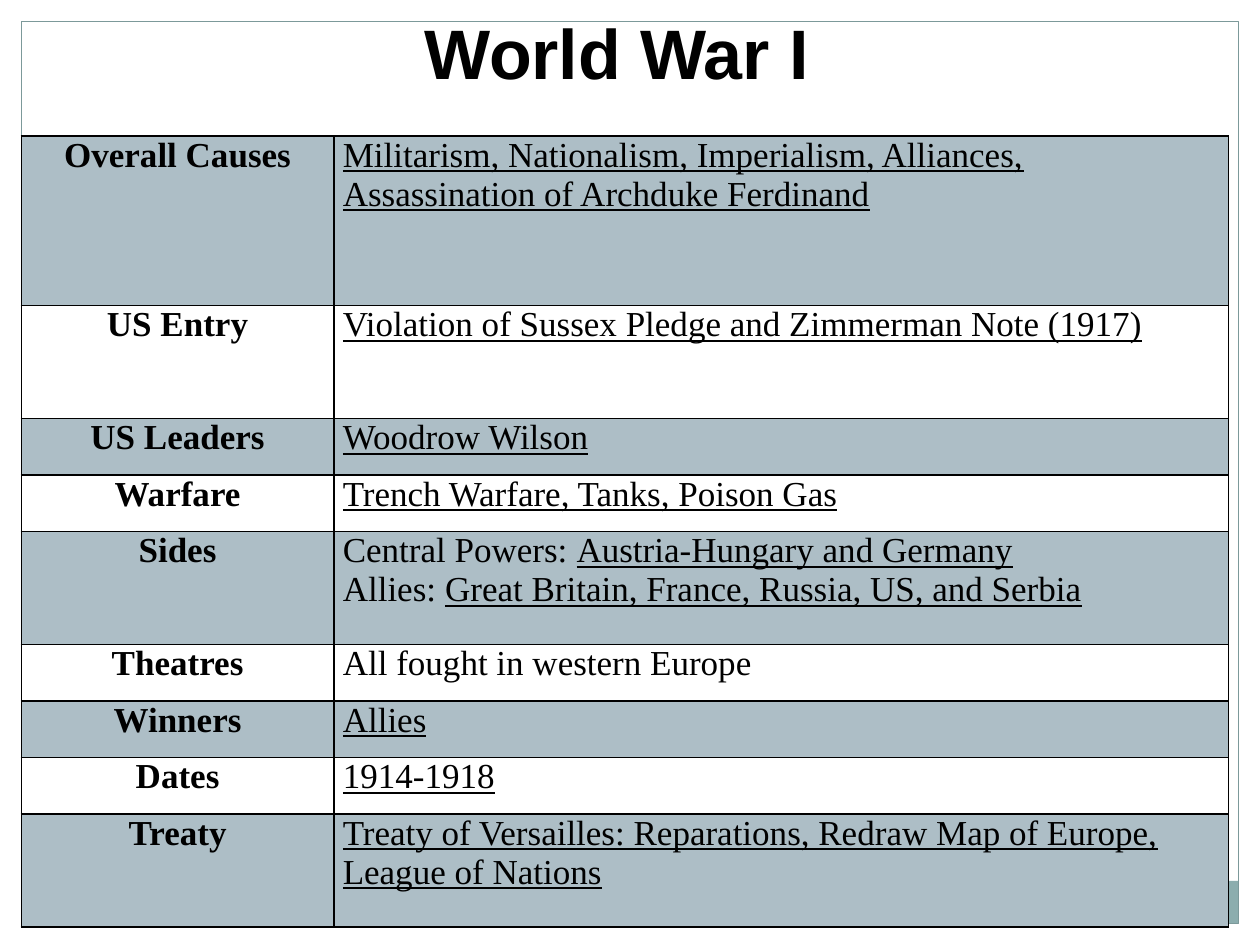
"""Build a one-slide summary table of World War I."""
from lxml import etree
from pptx import Presentation, util as u
from pptx.dml.color import RGBColor
from pptx.enum import shapes, text
from pptx.oxml.ns import qn

COLORS = {"ink": "000000", "paper": "FFFFFF", "band": "ADBEC6",
          "strip": "8CADAE", "frame": "7C999A"}
TITLE = "World War I"
FACTS = [
    ("Overall Causes", 3, [("", "Militarism, Nationalism, Imperialism, Alliances, "
                                "Assassination of Archduke Ferdinand")]),
    ("US Entry", 2, [("", "Violation of Sussex Pledge and Zimmerman Note (1917)")]),
    ("US Leaders", 1, [("", "Woodrow Wilson")]),
    ("Warfare", 1, [("", "Trench Warfare, Tanks, Poison Gas")]),
    ("Sides", 2, [("Central Powers: ", "Austria-Hungary and Germany"),
                  ("Allies: ", "Great Britain, France, Russia, US, and Serbia")]),
    ("Theatres", 1, [("All fought in western Europe", "")]),
    ("Winners", 1, [("", "Allies")]),
    ("Dates", 1, [("", "1914-1918")]),
    ("Treaty", 2, [("", "Treaty of Versailles: Reparations, Redraw Map of Europe, "
                        "League of Nations")]),
]
WIDTH, HEIGHT, MARGIN = 25.4, 19.05, 0.43
COLUMNS = (6.3, 18.03)
TABLE_TOP, ROW_UNIT = 2.74, 1.14
INNER_WIDTH, INNER_HEIGHT = WIDTH - 2 * MARGIN, HEIGHT - 2 * MARGIN
STRIP_HEIGHT = 0.86
BACKDROP = [
    ((0, 0, WIDTH, MARGIN), "paper", None),
    ((WIDTH - MARGIN, 0, MARGIN, HEIGHT), "paper", None),
    ((0, 0, MARGIN, HEIGHT), "paper", None),
    ((MARGIN, HEIGHT - MARGIN - STRIP_HEIGHT, INNER_WIDTH, STRIP_HEIGHT), "strip", None),
    ((MARGIN, MARGIN, INNER_WIDTH, INNER_HEIGHT), None, "frame"),
]


def rgb(name):
    return RGBColor.from_string(COLORS[name])


def paint(fill, name):
    if name:
        fill.solid()
        fill.fore_color.rgb = rgb(name)
    else:
        fill.background()


def add_run(paragraph, words, size, face, bold=False, underline=False):
    run = paragraph.add_run()
    run.text = words
    font = run.font
    font.size, font.name = u.Pt(size), face
    font.bold, font.underline = bold, underline
    font.color.rgb = rgb("ink")


def add_backdrop(slide):
    for box, fill, line in BACKDROP:
        panel = slide.shapes.add_shape(shapes.MSO_SHAPE.RECTANGLE, *map(u.Cm, box))
        panel.shadow.inherit = False
        paint(panel.fill, fill)
        paint(panel.line.fill, line)
        if line:
            panel.line.width = u.Pt(0.75)


def style_cell(cell, fill):
    cell.margin_left = cell.margin_right = u.Cm(0.18)
    cell.margin_top = cell.margin_bottom = 0
    properties = cell._tc.get_or_add_tcPr()
    for side in ("lnL", "lnR", "lnT", "lnB"):
        border = etree.SubElement(properties, qn(f"a:{side}"), w=str(u.Pt(1)))
        solid = etree.SubElement(border, qn("a:solidFill"))
        etree.SubElement(solid, qn("a:srgbClr"), val=COLORS["ink"])
    paint(cell.fill, fill)


def add_facts(slide):
    height = ROW_UNIT * sum(units for _, units, _ in FACTS)
    table = slide.shapes.add_table(
        len(FACTS), len(COLUMNS), u.Cm(MARGIN), u.Cm(TABLE_TOP),
        u.Cm(sum(COLUMNS)), u.Cm(height)).table
    table.first_row = table.horz_banding = False
    for column, width in zip(table.columns, COLUMNS):
        column.width = u.Cm(width)
    for index, (topic, units, details) in enumerate(FACTS):
        table.rows[index].height = u.Cm(ROW_UNIT * units)
        topic_cell, detail_cell = table.cell(index, 0), table.cell(index, 1)
        for cell in (topic_cell, detail_cell):
            style_cell(cell, None if index % 2 else "band")
        heading = topic_cell.text_frame.paragraphs[0]
        heading.alignment = text.PP_ALIGN.CENTER
        add_run(heading, topic, 20, "Times New Roman", bold=True)
        frame = detail_cell.text_frame
        for number, (plain, answer) in enumerate(details):
            line = frame.add_paragraph() if number else frame.paragraphs[0]
            for words, underline in ((plain, False), (answer, True)):
                if words:
                    add_run(line, words, 20, "Times New Roman", underline=underline)


def add_title(slide):
    frame = slide.shapes.add_textbox(u.Cm(8.25), 0, u.Cm(8.36), u.Cm(2.74)).text_frame
    frame.word_wrap = False
    frame.vertical_anchor = text.MSO_ANCHOR.TOP
    frame.margin_top = u.Cm(0.2)
    heading = frame.paragraphs[0]
    heading.alignment = text.PP_ALIGN.CENTER
    add_run(heading, TITLE, 40, "Arial", bold=True)


def main():
    deck = Presentation()
    deck.slide_width, deck.slide_height = u.Cm(WIDTH), u.Cm(HEIGHT)
    slide = deck.slides.add_slide(deck.slide_layouts[6])
    paint(slide.background.fill, "paper")
    add_backdrop(slide)
    add_facts(slide)
    add_title(slide)
    deck.save("out.pptx")


if __name__ == "__main__":
    main()
